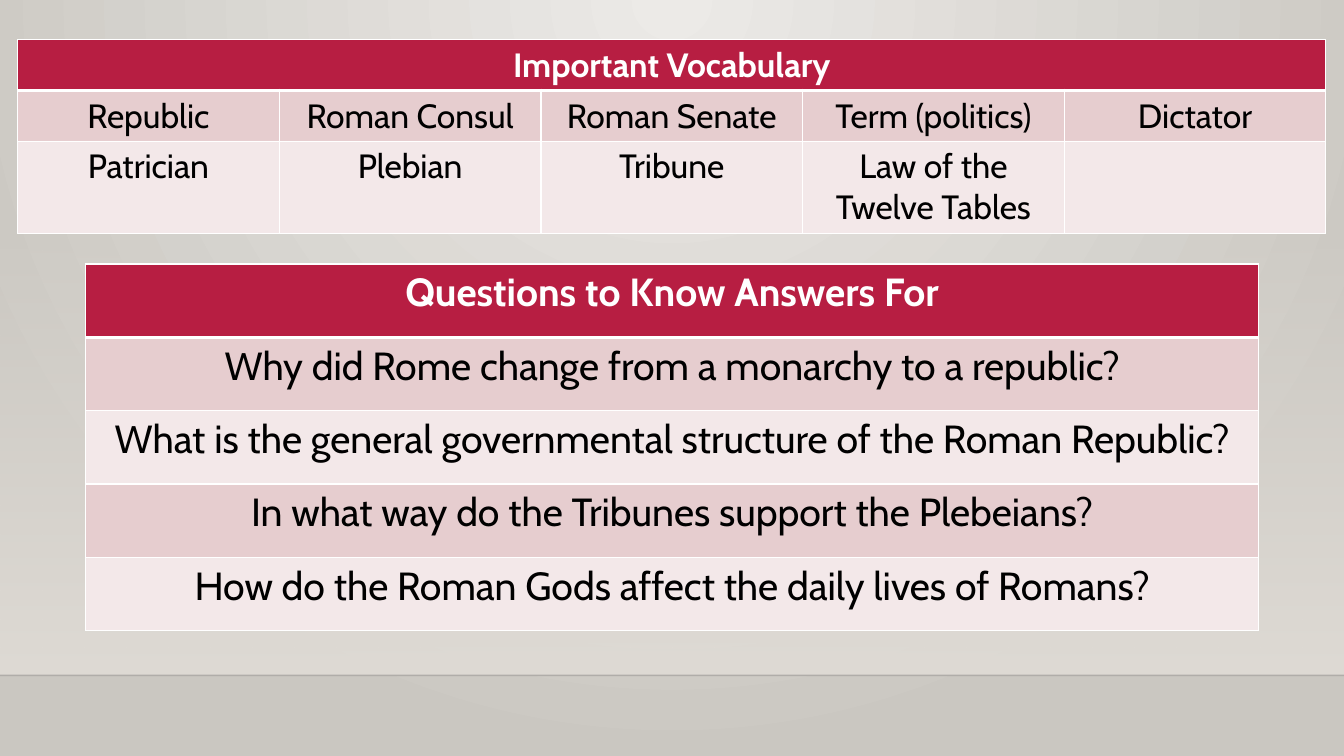
import pptx
import pptx.util
import pptx.dml.color
import pptx.enum.shapes
import pptx.enum.text
import pptx.oxml
import pptx.oxml.ns
from pptx.util import Pt

WIDTH, HEIGHT = 960, 540
FLOOR_TOP = 482.4
CRIMSON, WHITE, BLACK = "B71E42", "FFFFFF", "000000"
BANDS = ("E6CDCF", "F3E8E9")

VOCABULARY = [
    ["Republic", "Roman Consul", "Roman Senate", "Term (politics)", "Dictator"],
    ["Patrician", "Plebian", "Tribune", "Law of the Twelve Tables", ""],
]
QUESTIONS = [
    ["Why did Rome change from a monarchy to a republic?"],
    ["What is the general governmental structure of the Roman Republic?"],
    ["In what way do the Tribunes support the Plebeians?"],
    ["How do the Roman Gods affect the daily lives of Romans?"],
]


def rgb(value):
    return pptx.dml.color.RGBColor.from_string(value)


def add_child(parent, tag, **attributes):
    child = pptx.oxml.ns.qn(tag)
    child = parent.makeelement(child, attributes)
    parent.append(child)
    return child


def find(parent, tag):
    return parent.findall(".//" + pptx.oxml.ns.qn(tag))


def set_gradient(fill, colours):
    fill.gradient()
    for stop, colour in zip(fill.gradient_stops, colours):
        stop.color.rgb = rgb(colour)


def write_text(cell, text, size=24, colour=BLACK, bold=False, font="Cabin"):
    paragraph = cell.text_frame.paragraphs[0]
    paragraph.alignment = pptx.enum.text.PP_ALIGN.CENTER
    paragraph.font.size = Pt(size)
    if text:
        run = paragraph.add_run()
        run.text = text
        run.font.name = font
        run.font.size = Pt(size)
        run.font.bold = bold
        run.font.color.rgb = rgb(colour)


def style_cell(cell, fill, top=1, bottom=1):
    """White borders, then the fill, in the order the schema needs."""
    properties = cell._tc.get_or_add_tcPr()
    for side, weight in (("L", 1), ("R", 1), ("T", top), ("B", bottom)):
        border = add_child(properties, "a:ln" + side, w=str(Pt(weight)))
        add_child(add_child(border, "a:solidFill"), "a:srgbClr", val=WHITE)
    cell.fill.solid()
    cell.fill.fore_color.rgb = rgb(fill)


def add_titled_table(slide, title, body, left, top, width, heights, size):
    columns = len(body[0])
    table = slide.shapes.add_table(
        len(heights), columns, Pt(left), Pt(top), Pt(width), Pt(sum(heights))).table
    table.first_row = table.horz_banding = False
    for column in table.columns:
        column.width = Pt(width / columns)
    for row, height in zip(table.rows, heights):
        row.height = Pt(height)

    # Heading row
    for column in range(columns):
        style_cell(table.cell(0, column), CRIMSON, bottom=3)
    heading = table.cell(0, 0)
    if columns > 1:
        heading.merge(table.cell(0, columns - 1))
    write_text(heading, title, size=size, colour=WHITE, bold=True)

    # Banded body rows
    for row, texts in enumerate(body, start=1):
        for column, text in enumerate(texts):
            cell = table.cell(row, column)
            style_cell(cell, BANDS[(row - 1) % 2], top=3 if row == 1 else 1)
            write_text(cell, text, size=size)


def add_background(slide):
    set_gradient(slide.background.fill, ("ECEAE7", "CAC7C1"))
    gradient = find(slide.element, "a:gradFill")[0]
    for linear in find(gradient, "a:lin"):
        gradient.remove(linear)
    glow = add_child(gradient, "a:path", path="circle")
    add_child(glow, "a:fillToRect", l="43000", t="0", r="43000", b="100000")


def add_wall(slide, top, height):
    wall = slide.shapes.add_shape(
        pptx.enum.shapes.MSO_SHAPE.RECTANGLE, 0, Pt(top), Pt(WIDTH), Pt(height))
    wall.shadow.inherit = False
    wall.line.fill.background()
    set_gradient(wall.fill, ("DFDBD5", "DFDBD5"))
    wall.fill.gradient_angle = 270
    add_child(find(wall._element, "a:srgbClr")[0], "a:alpha", val="0")


def add_floor_line(slide, y):
    edge = slide.shapes.add_connector(
        pptx.enum.shapes.MSO_CONNECTOR.STRAIGHT, 0, Pt(y), Pt(WIDTH), Pt(y))
    edge.line.width = Pt(1)
    edge.line.color.rgb = rgb("000001")
    add_child(find(edge._element, "a:srgbClr")[0], "a:alpha", val="20000")
    add_child(find(edge._element, "p:spPr")[0], "a:effectLst")


def main():
    deck = pptx.Presentation()
    deck.slide_width, deck.slide_height = Pt(WIDTH), Pt(HEIGHT)
    slide = deck.slides.add_slide(deck.slide_layouts[6])

    # Backdrop
    add_background(slide)
    add_wall(slide, top=159, height=FLOOR_TOP - 159)
    add_floor_line(slide, FLOOR_TOP)

    # Tables
    add_titled_table(slide, "Important Vocabulary", VOCABULARY, left=12.6, top=28.3,
                     width=934.5, heights=[36, 36, 65.8], size=24)
    add_titled_table(slide, "Questions to Know Answers For", QUESTIONS, left=61.2,
                     top=188.6, width=837.5, heights=[52.4] * 5, size=28)

    deck.save("out.pptx")


if __name__ == "__main__":
    main()
